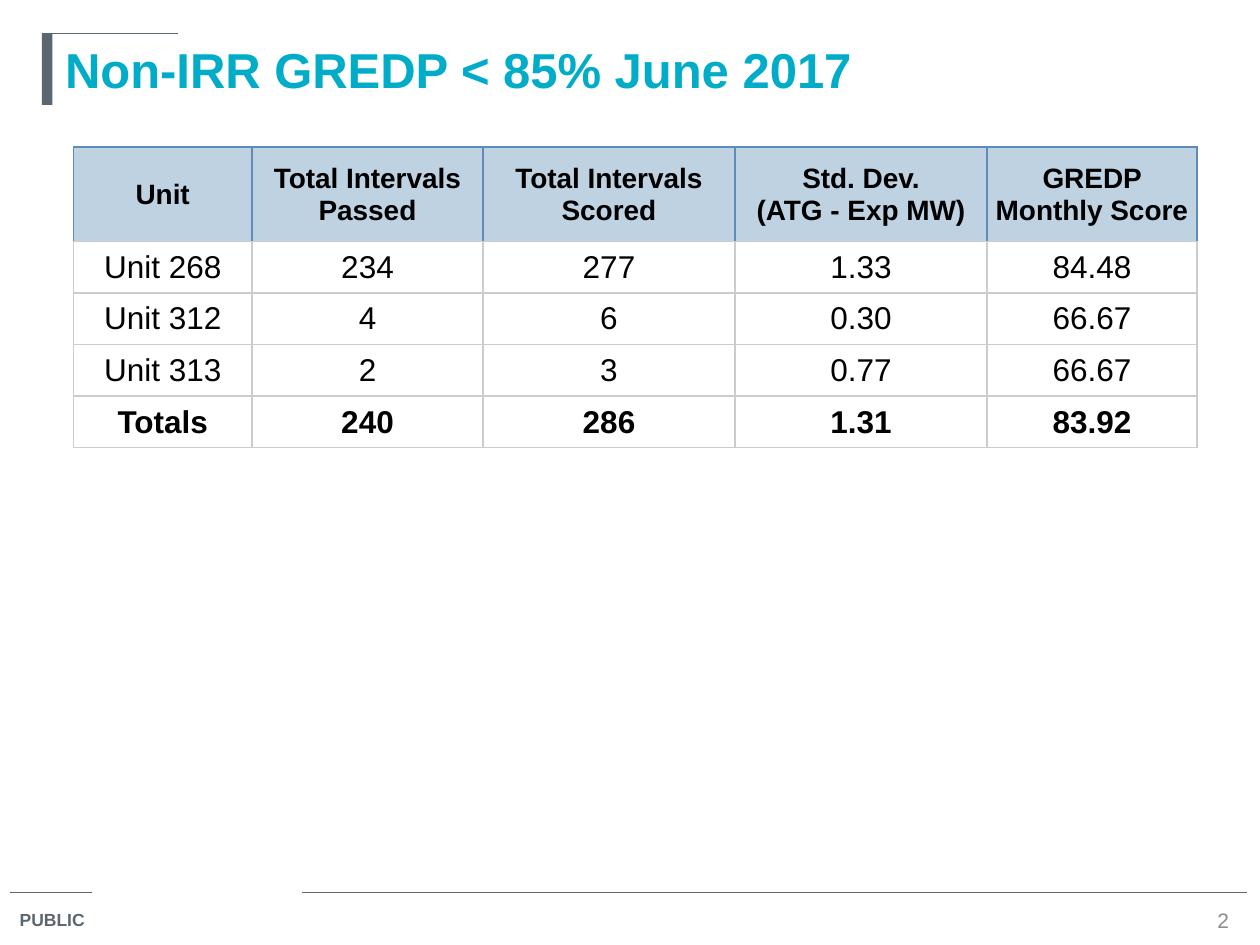
from dataclasses import dataclass
from itertools import accumulate

from lxml import etree
from pptx import Presentation
from pptx import util as u
from pptx.dml.color import RGBColor
from pptx.enum import shapes, text
from pptx.oxml.ns import qn


@dataclass(frozen=True)
class Theme:
    font: str = "Arial"
    accent: str = "00ACC8"
    slate: str = "5B6770"
    muted: str = "8C8C8C"
    ink: str = "000000"
    head_fill: str = "BFD2E2"
    head_edge: str = "608BB4"
    edge: str = "CCCCCC"
    title: int = 28
    body: int = 18
    head: int = 16
    number: int = 12
    label: int = 10
    rule: float = 0.75
    border: float = 1


T = Theme()
UNIT = u.Inches(10) // 120
COLS = [17, 22, 24, 24, 20]
ROWS = [9, 4.9, 4.9, 4.9, 4.9]
DATA = [
    ["Unit", "Total Intervals Passed", "Total Intervals Scored",
     "Std. Dev.\n(ATG - Exp MW)", "GREDP Monthly Score"],
    ["Unit 268", "234", "277", "1.33", "84.48"],
    ["Unit 312", "4", "6", "0.30", "66.67"],
    ["Unit 313", "2", "3", "0.77", "66.67"],
    ["Totals", "240", "286", "1.31", "83.92"],
]


def grid(*units):
    return [u.Emu(round(n * UNIT)) for n in units]


def write(tf, words, size, color=T.ink, bold=False, align=text.PP_ALIGN.LEFT,
          anchor=text.MSO_ANCHOR.TOP):
    tf.word_wrap = True
    tf.vertical_anchor = anchor
    tf.text = words
    for p in tf.paragraphs:
        p.alignment = align
        for r in p.runs:
            f = r.font
            f.name, f.size, f.bold = T.font, u.Pt(size), bold
            f.color.rgb = RGBColor.from_string(color)


def rule(s, x1, x2, y):
    x1, x2, y = grid(x1, x2, y)
    c = s.shapes.add_connector(shapes.MSO_CONNECTOR.STRAIGHT, x1, y, x2, y)
    c.line.color.rgb = RGBColor.from_string(T.slate)
    c.line.width = u.Pt(T.rule)
    etree.SubElement(c._element.spPr, qn("a:effectLst"))


def border(cell, **sides):
    tcPr = cell._tc.get_or_add_tcPr()
    for side, color in sides.items():
        ln = etree.SubElement(tcPr, qn(f"a:ln{side}"), w=str(u.Pt(T.border)))
        fill = etree.SubElement(ln, qn("a:solidFill"))
        etree.SubElement(fill, qn("a:srgbClr"), val=color)


def title(s, x, y, w, h):
    bar = s.shapes.add_shape(shapes.MSO_SHAPE.RECTANGLE, *grid(x - 1, y, 1, 6.8))
    bar.shadow.inherit = False
    bar.fill.solid()
    bar.fill.fore_color.rgb = RGBColor.from_string(T.slate)
    bar.line.fill.background()
    rule(s, x - 1, x + 12, y)
    sp = s.shapes.title
    sp.left, sp.top, sp.width, sp.height = grid(x, y, w, h)
    sp.text_frame.auto_size = text.MSO_AUTO_SIZE.NONE
    write(sp.text_frame, "Non-IRR GREDP < 85% June 2017", T.title, T.accent, True)


def score_table(s, x, y):
    frame = s.shapes.add_table(len(ROWS), len(COLS), *grid(x, y, sum(COLS), sum(ROWS)))
    table = frame.table
    table.horz_banding = False
    for col, width in zip(table.columns, grid(*COLS)):
        col.width = width
    for row, height in zip(table.rows, grid(*ROWS)):
        row.height = height
    for i, values in enumerate(DATA):
        is_head = i == 0
        edge = T.head_edge if is_head else T.edge
        for j, value in enumerate(values):
            cell = table.cell(i, j)
            pad = u.Inches(0.01 if i in (0, len(DATA) - 1) else 0)
            cell.margin_left = cell.margin_right = cell.margin_top = pad
            cell.margin_bottom = 0
            border(cell, L=edge, R=edge, T=edge, B=T.edge)
            if is_head:
                cell.fill.solid()
                cell.fill.fore_color.rgb = RGBColor.from_string(T.head_fill)
            else:
                cell.fill.background()
            write(cell.text_frame, value, T.head if is_head else T.body,
                  bold=i in (0, len(DATA) - 1), align=text.PP_ALIGN.CENTER)
            cell.vertical_anchor = text.MSO_ANCHOR.MIDDLE


def footer(s, x, y, w):
    left_end, right_start, _ = accumulate([x + 7.8, 20, w - 27.8])
    rule(s, x, left_end, y)
    rule(s, right_start, x + w, y)
    tag = s.shapes.add_textbox(*grid(x - 0.3, y + 1, 9.2, 3.4))
    write(tag.text_frame, "PUBLIC", T.label, T.slate, True)
    number = s.shapes.add_textbox(*grid(x + w - 3.8, y + 1.2, 3, 2.8))
    tf = number.text_frame
    tf.margin_left = tf.margin_right = tf.margin_top = tf.margin_bottom = 0
    write(tf, "2", T.number, T.muted, align=text.PP_ALIGN.CENTER,
          anchor=text.MSO_ANCHOR.MIDDLE)


def main():
    prs = Presentation()
    prs.slide_width, prs.slide_height = grid(120, 90)
    s = prs.slides.add_slide(prs.slide_layouts[5])
    footer(s, 1, 85, 117.8)
    title(s, 5, 3.2, 111, 9.4)
    score_table(s, 7, 14)
    prs.save("out.pptx")


if __name__ == "__main__":
    main()
